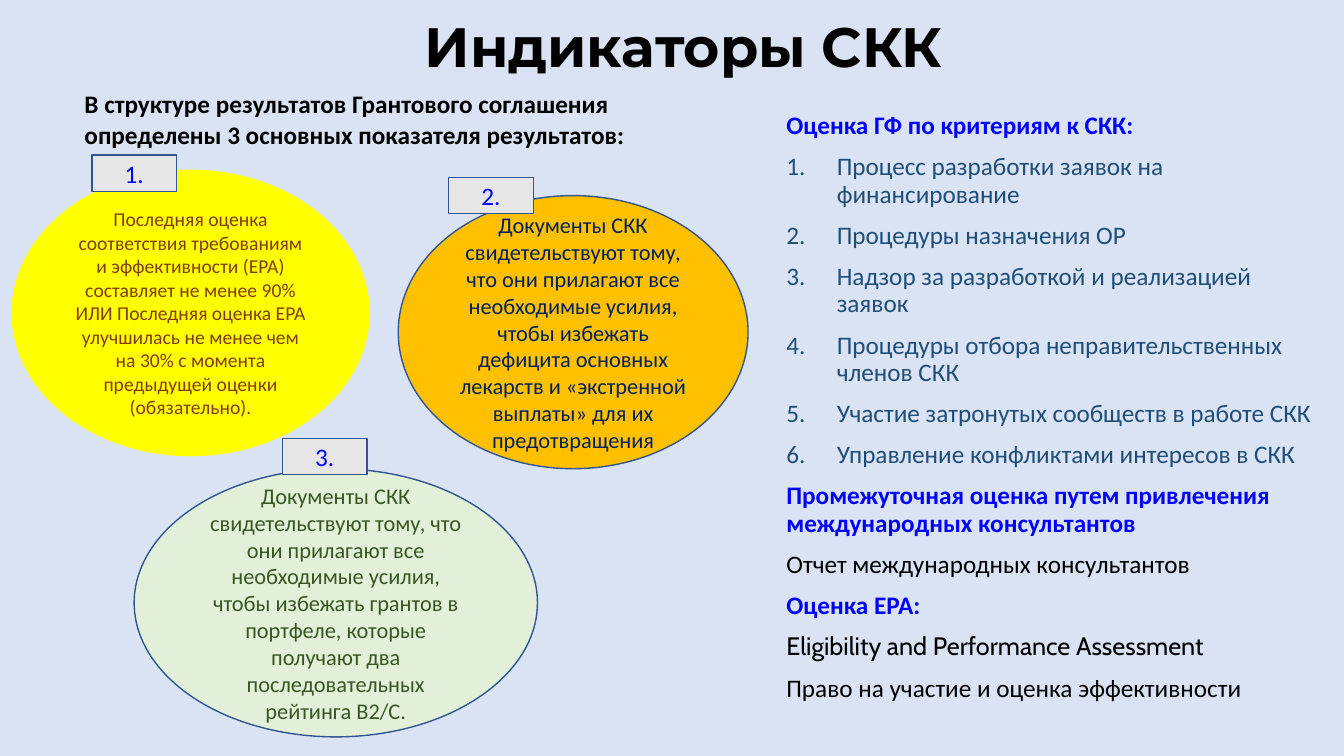
from dataclasses import dataclass

from lxml.etree import SubElement
from pptx import Presentation
from pptx.dml.color import RGBColor
from pptx.enum.shapes import MSO_SHAPE as Preset
from pptx.enum.text import MSO_ANCHOR as Anchor, MSO_AUTO_SIZE as AutoSize, PP_ALIGN as Align
from pptx.oxml.ns import qn
from pptx.util import Inches, Pt

WIDTH, HEIGHT = Inches(13.33), Inches(7.5)
BLUE, BLACK, STEEL, OUTLINE = "0000FF", "000000", "1F4E79", "325491"
BADGE_SIZE = (6.3, 4.8)


@dataclass(frozen=True)
class Box:
    """Left, top, width and height in percent of the slide's size."""
    left: float
    top: float
    width: float
    height: float

    def emu(self) -> tuple[int, int, int, int]:
        return (int(WIDTH * self.left / 100), int(HEIGHT * self.top / 100),
                int(WIDTH * self.width / 100), int(HEIGHT * self.height / 100))


@dataclass(frozen=True)
class Indicator:
    text: str
    oval: Box
    badge_at: tuple[float, float]
    fill: str
    ink: str
    line: str = OUTLINE
    size: float = 16


@dataclass(frozen=True)
class Entry:
    text: str
    ink: str = STEEL
    bold: bool = False
    numbered: bool = False
    face: str = "Calibri"


def heading(text: str) -> Entry:
    return Entry(text, BLUE, bold=True)


def criterion(text: str) -> Entry:
    return Entry(text, numbered=True)


INDICATORS = [
    Indicator("Последняя оценка соответствия требованиям и эффективности (EPA) составляет "
              "не менее 90% ИЛИ Последняя оценка EPA улучшилась не менее чем на 30% "
              "с момента предыдущей оценки (обязательно).",
              Box(0.9, 22.53, 26.56, 37.73), (6.83, 20.53), "FFFF00", "843C0B", "FFFF00", 14),
    Indicator("Документы СКК свидетельствуют тому, что они прилагают все необходимые усилия, "
              "чтобы избежать дефицита основных лекарств и «экстренной выплаты» "
              "для их предотвращения",
              Box(29.63, 25.87, 26.03, 36.13), (33.38, 23.47), "FFC000", "002060"),
    Indicator("Документы СКК свидетельствуют тому, что они прилагают все необходимые усилия, "
              "чтобы избежать грантов в портфеле, которые получают два последовательных "
              "рейтинга B2/C.",
              Box(9.98, 62, 30.01, 35.47), (21.01, 58), "E2F0D9", "385723"),
]

ASSESSMENT = [
    heading("Оценка ГФ по критериям к СКК:"),
    criterion("Процесс разработки заявок на финансирование"),
    criterion("Процедуры назначения ОР"),
    criterion("Надзор за разработкой и реализацией заявок"),
    criterion("Процедуры отбора неправительственных членов СКК"),
    criterion("Участие затронутых сообществ в работе СКК"),
    criterion("Управление конфликтами интересов в СКК"),
    heading("Промежуточная оценка путем привлечения международных консультантов"),
    Entry("Отчет международных консультантов", BLACK),
    heading("Оценка EPA:"),
    Entry("Eligibility and Performance Assessment", BLACK, face="Cabin"),
    Entry("Право на участие и оценка эффективности", BLACK),
]


def color(code: str) -> RGBColor:
    return RGBColor.from_string(code)


def style(paragraph, size: float, ink: str, bold: bool = False, face: str = "Calibri") -> None:
    font = paragraph.font
    font.size, font.bold, font.name = Pt(size), bold, face
    font.color.rgb = color(ink)


def place(shape, box: Box) -> None:
    shape.left, shape.top, shape.width, shape.height = box.emu()


def set_bullet(paragraph, numbered: bool) -> None:
    """Number the paragraph with a hanging indent, or clear its bullet."""
    properties = paragraph._p.get_or_add_pPr()
    hang = Inches(0.5) if numbered else 0
    properties.set("marL", str(hang))
    properties.set("indent", str(-hang))
    if numbered:
        SubElement(properties, qn("a:buFont"), typeface="+mj-lt")
        SubElement(properties, qn("a:buAutoNum"), type="arabicPeriod")
    else:
        SubElement(properties, qn("a:buNone"))


def add_label(slide, preset: Preset, box: Box, text: str, fill: str, line: str,
              size: float, ink: str) -> None:
    shape = slide.shapes.add_shape(preset, *box.emu())
    shape.shadow.inherit = False
    shape.fill.solid()
    shape.fill.fore_color.rgb = color(fill)
    shape.line.color.rgb = color(line)
    shape.line.width = Pt(1)
    frame = shape.text_frame
    frame.word_wrap = True
    frame.vertical_anchor = Anchor.MIDDLE
    frame.text = text
    paragraph = frame.paragraphs[0]
    paragraph.alignment = Align.CENTER
    style(paragraph, size, ink)


def fill_title(title) -> None:
    place(title, Box(7.73, 3.73, 86.27, 5.73))
    frame = title.text_frame
    frame.auto_size = AutoSize.NONE
    frame.vertical_anchor = Anchor.MIDDLE
    frame.text = "Индикаторы СКК"
    paragraph = frame.paragraphs[0]
    paragraph.alignment = Align.CENTER
    paragraph.line_spacing = 0.9
    style(paragraph, 39.6, BLACK, True, "Montserrat")


def fill_assessment(body) -> None:
    place(body, Box(57.76, 14.27, 41.34, 83.07))
    frame = body.text_frame
    frame.auto_size = AutoSize.NONE
    frame.text = "\n".join(entry.text for entry in ASSESSMENT)
    for paragraph, entry in zip(frame.paragraphs, ASSESSMENT):
        set_bullet(paragraph, entry.numbered)
        paragraph.line_spacing = 0.9
        paragraph.space_before = Pt(10)
        style(paragraph, 18, entry.ink, entry.bold, entry.face)


def add_intro(slide) -> None:
    intro = slide.shapes.add_textbox(*Box(5.55, 11.07, 42.76, 9.47).emu())
    frame = intro.text_frame
    frame.word_wrap = True
    frame.auto_size = AutoSize.SHAPE_TO_FIT_TEXT
    frame.text = ("В структуре результатов Грантового соглашения "
                  "определены 3 основных показателя результатов:")
    style(frame.paragraphs[0], 18, BLACK, True)


def main() -> None:
    deck = Presentation()
    deck.slide_width, deck.slide_height = WIDTH, HEIGHT
    slide = deck.slides.add_slide(deck.slide_layouts[1])
    slide.background.fill.solid()
    slide.background.fill.fore_color.rgb = color("DAE3F3")

    fill_title(slide.shapes.title)
    fill_assessment(slide.placeholders[1])
    add_intro(slide)
    for item in INDICATORS:
        add_label(slide, Preset.OVAL, item.oval, item.text, item.fill, item.line,
                  item.size, item.ink)
    for number, item in enumerate(INDICATORS, start=1):
        add_label(slide, Preset.RECTANGLE, Box(*item.badge_at, *BADGE_SIZE), f"{number}.",
                  "E7E6E6", OUTLINE, 18, BLUE)
    deck.save("out.pptx")


if __name__ == "__main__":
    main()
